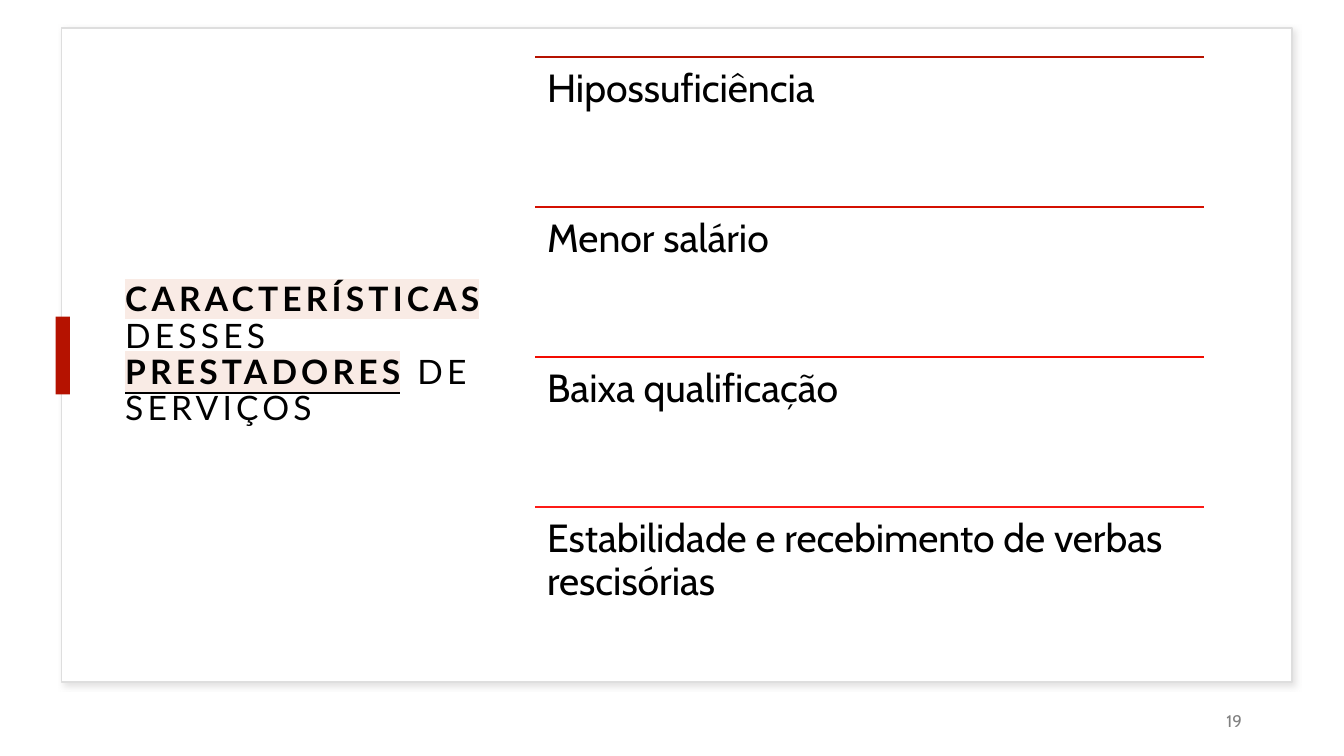
from dataclasses import dataclass

from lxml.etree import SubElement
from pptx import Presentation
from pptx.dml.color import RGBColor
from pptx.enum.shapes import MSO_CONNECTOR, MSO_SHAPE
from pptx.enum.text import MSO_ANCHOR, MSO_AUTO_SIZE, PP_ALIGN
from pptx.oxml.ns import qn
from pptx.util import Cm, Pt


@dataclass(frozen=True)
class Theme:
    white: str = "FFFFFF"
    black: str = "000000"
    border: str = "DEDEDE"
    shadow: str = "C5C3C3"
    accent: str = "B51200"
    highlight: str = "F9EBE5"
    muted: str = "808080"
    rules: tuple = ("B51200", "D41001", "F30C01", "FD1B17")
    heading_font: str = "Lato"
    body_font: str = "Cabin"
    title_size: int = 24
    item_size: int = 28
    number_size: int = 12


theme = Theme()


def set_font(para, name, size, color):
    para.font.name = name
    para.font.size = Pt(size)
    para.font.color.rgb = RGBColor.from_string(color)


def add_panel(left, top, width, height, fill):
    panel = page.shapes.add_shape(MSO_SHAPE.RECTANGLE, left, top, width, height)
    panel.shadow.inherit = False
    panel.fill.solid()
    panel.fill.fore_color.rgb = RGBColor.from_string(fill)
    panel.line.fill.background()
    return panel


deck = Presentation()
deck.slide_width, deck.slide_height = Cm(33.87), Cm(19.05)
page = deck.slides.add_slide(deck.slide_layouts[5])

# Card with a soft shadow, behind the title
title = page.shapes.title
card = add_panel(Cm(1.55), Cm(0.71), Cm(31.01), Cm(16.48), theme.white)
card.line.color.rgb = RGBColor.from_string(theme.border)
card.line.width = Pt(1)
effects = card.element.spPr.find(qn("a:effectLst"))
shadow = SubElement(effects, qn("a:outerShdw"), blurRad=str(Pt(4)),
                    dist=str(Pt(3)), dir="2700000", algn="tl", rotWithShape="0")
shadow_color = SubElement(shadow, qn("a:srgbClr"), val=theme.shadow)
SubElement(shadow_color, qn("a:alpha"), val="50000")
title.element.addprevious(card.element)

# Title
title.left, title.top, title.width, title.height = Cm(2.9), Cm(1.4), Cm(9.68), Cm(15.11)
frame = title.text_frame
frame.word_wrap = True
frame.auto_size = MSO_AUTO_SIZE.NONE
frame.vertical_anchor = MSO_ANCHOR.MIDDLE
para = frame.paragraphs[0]
para.alignment = PP_ALIGN.LEFT
para.line_spacing = 0.9
set_font(para, theme.heading_font, theme.title_size, theme.black)
title_parts = [  # text, emphasised, underlined
    ("CARACTERÍSTICAS", True, False),
    (" DESSES ", False, False),
    ("PRESTADORES", True, True),
    (" DE SERVIÇOS", False, False),
]
for text, emphasised, underlined in title_parts:
    span = para.add_run()
    span.text = text
    span.font.bold = emphasised
    span.font.underline = underlined
    properties = span._r.get_or_add_rPr()
    properties.set("spc", "300")
    if emphasised:
        highlight = SubElement(properties, qn("a:highlight"))
        SubElement(highlight, qn("a:srgbClr"), val=theme.highlight)

# Accent bar on the card's edge
add_panel(Cm(1.4), Cm(7.98), Cm(0.36), Cm(1.96), theme.accent)

# Slide number
box = page.shapes.add_textbox(Cm(23.93), Cm(17.65), Cm(7.62), Cm(1.02))
box.text_frame.word_wrap = True
box.text_frame.vertical_anchor = MSO_ANCHOR.MIDDLE
para = box.text_frame.paragraphs[0]
para.text = "19"
para.alignment = PP_ALIGN.RIGHT
para.space_after = Pt(6)
set_font(para, theme.body_font, theme.number_size, theme.muted)

# Characteristics, each under its own rule
items = [
    "Hipossuficiência",
    "Menor salário",
    "Baixa qualificação",
    "Estabilidade e recebimento de verbas rescisórias",
]
left, first_top, width, row_height = Cm(13.49), Cm(1.44), Cm(16.84), Cm(3.78)
for index, (item, color) in enumerate(zip(items, theme.rules)):
    top = first_top + index * row_height
    rule = page.shapes.add_connector(MSO_CONNECTOR.STRAIGHT, left, top, left + width, top)
    rule.line.color.rgb = RGBColor.from_string(color)
    rule.line.width = Pt(1)
    SubElement(rule.element.spPr, qn("a:effectLst"))

    box = page.shapes.add_textbox(left, top, width, row_height)
    frame = box.text_frame
    frame.word_wrap = True
    frame.margin_left = frame.margin_right = Cm(0.3)
    frame.margin_top = frame.margin_bottom = Cm(0.3)
    para = frame.paragraphs[0]
    para.text = item
    para.line_spacing = 0.9
    set_font(para, theme.body_font, theme.item_size, theme.black)

deck.save("out.pptx")
